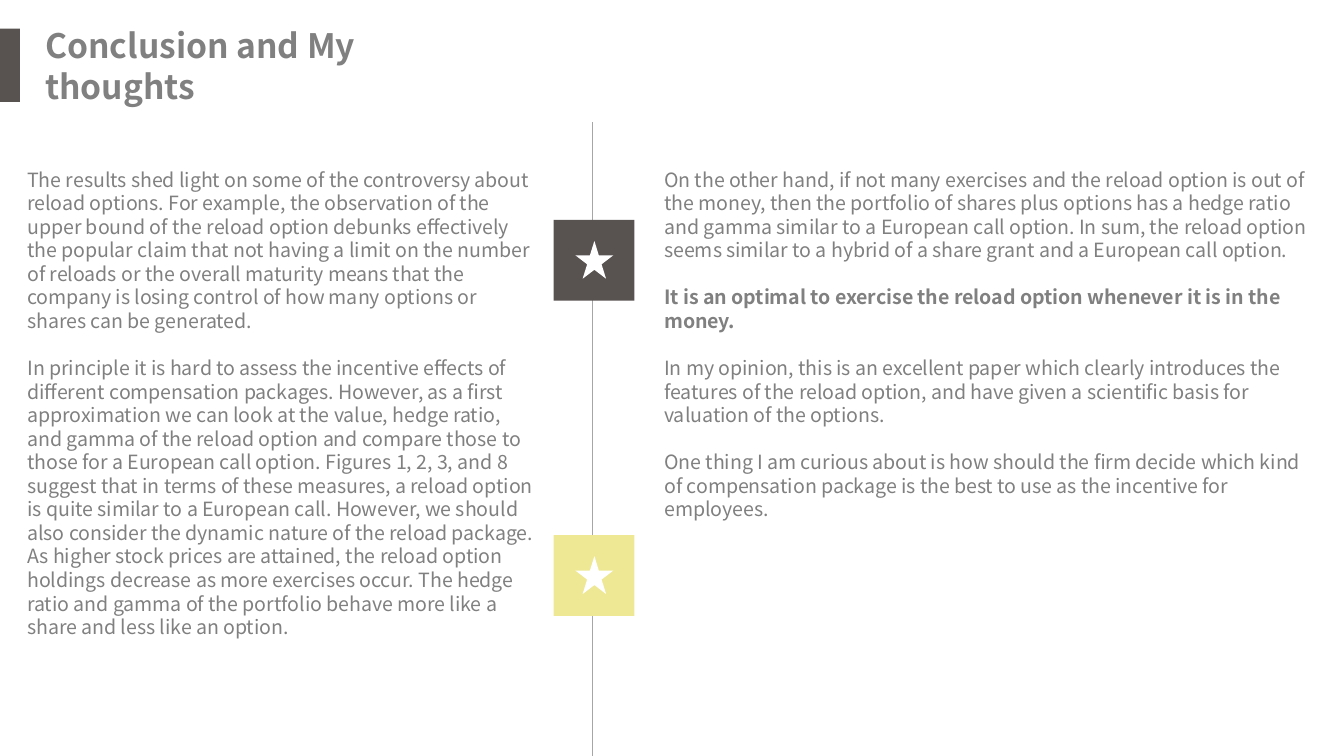
import pptx
import pptx.util
import pptx.dml.color
import pptx.enum.shapes
import pptx.enum.text
import pptx.oxml.ns
import lxml.etree

WIDE = 10
HIGH = WIDE * 9 / 16
COL, ROW = WIDE / 100, HIGH / 100
FONT = "Noto Sans CJK SC"
LEAD = 1.2
HUES = {"dark": "585251", "pale": "EEE895", "white": "FFFFFF",
        "text": "808080", "rule": "A6A6A6"}
KIND = pptx.enum.shapes.MSO_SHAPE

TITLE = "Conclusion and My thoughts"
LEFT = [
    ("The results shed light on some of the controversy about reload options. "
     "For example, the observation of the upper bound of the reload option "
     "debunks effectively the popular claim that not having a limit on the "
     "number of reloads or the overall maturity means that the company is "
     "losing control of how many options or shares can be generated.", False),
    ("In principle it is hard to assess the incentive effects of different "
     "compensation packages. However, as a first approximation we can look at "
     "the value, hedge ratio, and gamma of the reload option and compare those "
     "to those for a European call option. Figures 1, 2, 3, and 8 suggest that "
     "in terms of these measures, a reload option is quite similar to a "
     "European call. However, we should also consider the dynamic nature of "
     "the reload package. As higher stock prices are attained, the reload "
     "option holdings decrease as more exercises occur. The hedge ratio and "
     "gamma of the portfolio behave more like a share and less like an "
     "option.", False),
]
RIGHT = [
    ("On the other hand, if not many exercises and the reload option is out of "
     "the money, then the portfolio of shares plus options has a hedge ratio "
     "and gamma similar to a European call option. In sum, the reload option "
     "seems similar to a hybrid of a share grant and a European call option.",
     False),
    ("It is an optimal to exercise the reload option whenever it is in the "
     "money.", True),
    ("In my opinion, this is an excellent paper which clearly introduces the "
     "features of the reload option, and have given a scientific basis for "
     "valuation of the options.", False),
    ("One thing I am curious about is how should the firm decide which kind of "
     "compensation package is the best to use as the incentive for employees.",
     False),
]


def hue(name):
    return pptx.dml.color.RGBColor.from_string(HUES[name])


def span(*box):
    return [pptx.util.Inches(part) for part in box]


def grid(left, top, cols, rows):
    return left * COL, top * ROW, cols * COL, rows * ROW


def block(shapes, kind, box, fill):
    shape = shapes.add_shape(kind, *span(*box))
    shape.shadow.inherit = False
    shape.fill.solid()
    shape.fill.fore_color.rgb = hue(fill)
    shape.line.fill.background()
    return shape


def write(frame, items, size):
    frame.word_wrap = True
    lead = pptx.util.Pt(size * LEAD)
    for place, (text, bold) in enumerate(items):
        para = frame.add_paragraph() if place else frame.paragraphs[0]
        para.text = text
        para.alignment = pptx.enum.text.PP_ALIGN.LEFT
        para.line_spacing = lead
        if place:
            para.space_before = lead
        para.font.name = FONT
        para.font.size = pptx.util.Pt(size)
        para.font.bold = bold
        para.font.color.rgb = hue("text")


def header(slide, box):
    x, y, w, h = box
    block(slide.shapes, KIND.RECTANGLE,
          (x, y + 0.11 * h, 0.05 * w, 0.77 * h), "dark")
    title = block(slide.shapes, KIND.RECTANGLE,
                  (x + 0.08 * w, y, 0.92 * w, h), "white")
    title.text_frame.vertical_anchor = pptx.enum.text.MSO_ANCHOR.MIDDLE
    write(title.text_frame, [(TITLE, True)], 18)


def badge(slide, box, fill):
    x, y, w, h = box
    group = slide.shapes.add_group_shape()
    block(group.shapes, KIND.RECTANGLE, box, fill)
    block(group.shapes, KIND.STAR_5_POINT,
          (x + 0.27 * w, y + 0.26 * h, 0.47 * w, 0.47 * h), "white")


def spine(slide, box):
    x, y, w, h = box
    mid = x + 0.48 * w
    line = slide.shapes.add_connector(
        pptx.enum.shapes.MSO_CONNECTOR.STRAIGHT, *span(mid, y, mid, y + h))
    line.line.color.rgb = hue("rule")
    line.line.width = pptx.util.Pt(0.75)
    lxml.etree.SubElement(line._element.spPr,
                          pptx.oxml.ns.qn("a:effectLst"))
    for tier, fill in ((29.1, "dark"), (70.8, "pale")):
        badge(slide, (x, tier * ROW, w, w), fill)


def column(slide, box, items):
    text = slide.shapes.add_textbox(*span(*box))
    write(text.text_frame, items, 10.5)


def main():
    deck = pptx.Presentation()
    deck.slide_width, deck.slide_height = span(WIDE, HIGH)
    slide = deck.slides.add_slide(deck.slide_layouts[6])
    header(slide, grid(0, 2.4, 29.8, 12.6))
    spine(slide, grid(41.2, 16.2, 6, 83.8))
    column(slide, grid(1.05, 21.3, 39.9, 67.7), LEFT)
    column(slide, grid(48.45, 21.3, 50, 52), RIGHT)
    deck.save("out.pptx")


if __name__ == "__main__":
    main()
